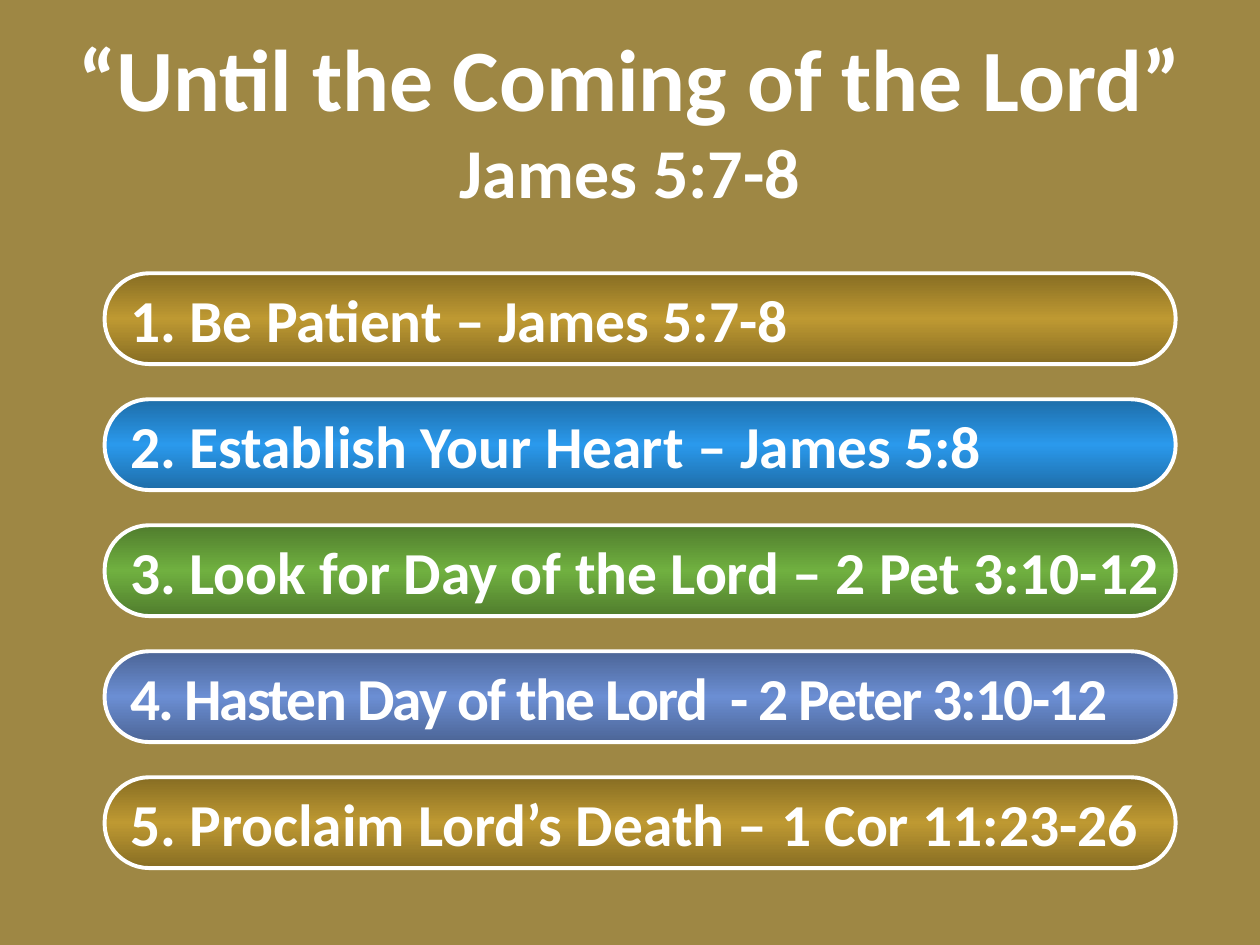
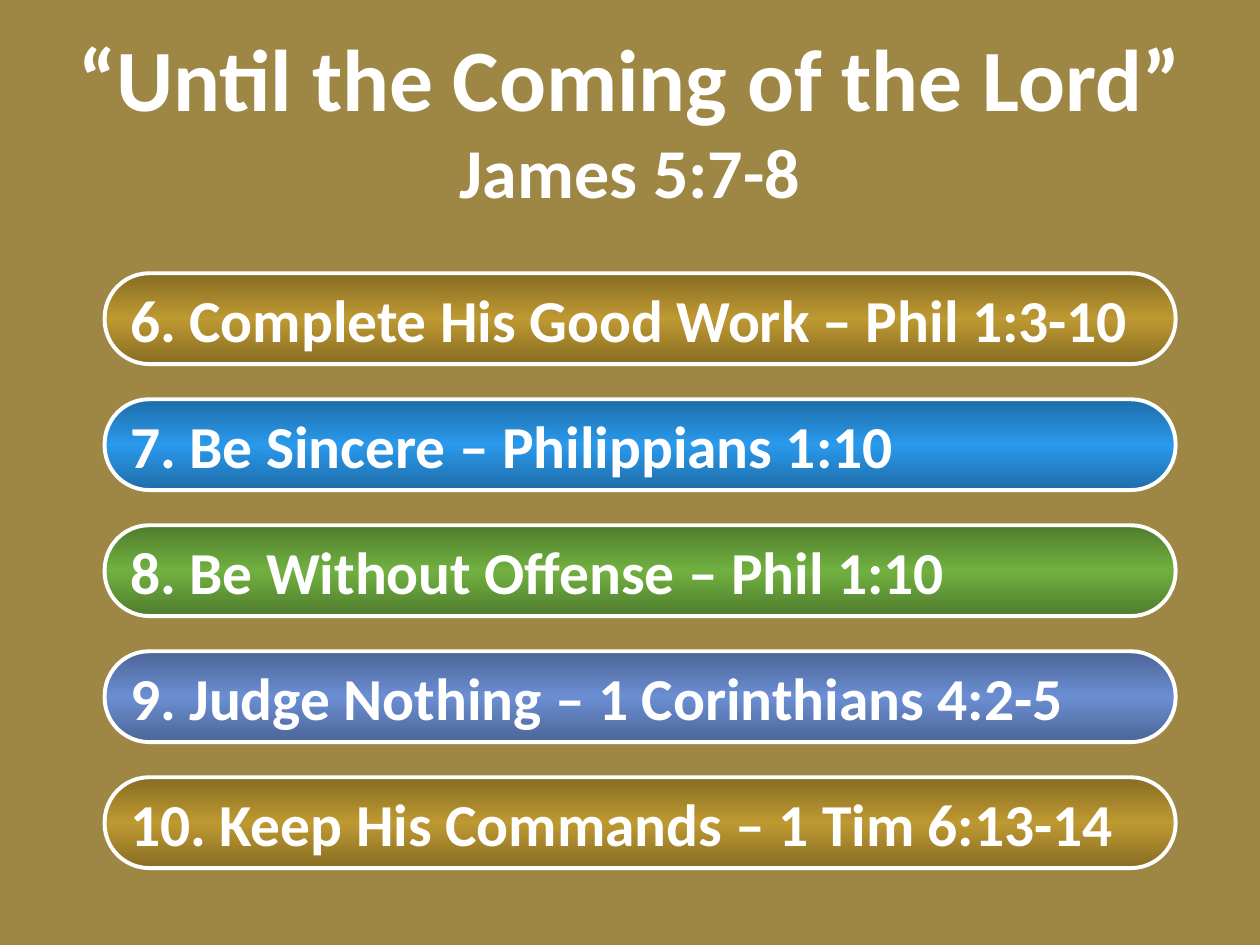
from copy import deepcopy
from dataclasses import dataclass
from itertools import cycle

from lxml import etree
from pptx import Presentation
from pptx import util as u
from pptx.dml.color import RGBColor
from pptx.enum import shapes, text
from pptx.oxml import ns


@dataclass(frozen=True)
class Theme:
    background: str = "9E8744"
    white: str = "FFFFFF"
    bars: tuple[str, ...] = ("BE9932", "2A99EC", "70B040", "6B8ED3")
    edge_shade: int = 46275  # thousandths of a percent
    font: str = "Calibri"
    title_size: int = 50
    subtitle_size: int = 40
    bar_size: int = 34
    outline: float = 2.25


@dataclass(frozen=True)
class Point:
    wording: str
    spacing: int = 0  # hundredths of a point


THEME = Theme()
TITLE_ONLY = 5
BAR_LEFT, BAR_TOP = u.Cm(2.11), u.Cm(5.51)
BAR_WIDTH, BAR_HEIGHT = u.Cm(21.59), u.Cm(1.83)
BAR_PITCH = u.Cm(2.54)

TITLE = "“Until the Coming of the Lord”"
SUBTITLE = "James 5:7-8"
SLIDES = (
    (
        Point("1. Be Patient – James 5:7-8"),
        Point("2. Establish Your Heart – James 5:8"),
        Point("3. Look for Day of the Lord – 2 Pet 3:10-12"),
        Point("4. Hasten Day of the Lord  - 2 Peter 3:10-12", spacing=-100),
        Point("5. Proclaim Lord’s Death – 1 Cor 11:23-26"),
    ),
    (
        Point("6. Complete His Good Work – Phil 1:3-10"),
        Point("7. Be Sincere – Philippians 1:10"),
        Point("8. Be Without Offense – Phil 1:10"),
        Point("9. Judge Nothing – 1 Corinthians 4:2-5"),
        Point("10. Keep His Commands – 1 Tim 6:13-14"),
    ),
)


def add_text(paragraph, wording: str, *, size: int, spacing: int = 0) -> None:
    run = paragraph.add_run()
    run.text = wording
    run.font.name = THEME.font
    run.font.size = u.Pt(size)
    run.font.bold = True
    run.font.color.rgb = RGBColor.from_string(THEME.white)
    if spacing:
        run.font._element.set("spc", str(spacing))


def add_title(slide) -> None:
    title = slide.shapes.title
    title.left, title.top = u.Cm(1.27), u.Cm(0.76)
    title.width, title.height = u.Cm(22.86), u.Cm(3.25)
    frame = title.text_frame
    frame.auto_size = text.MSO_AUTO_SIZE.NONE
    frame.vertical_anchor = text.MSO_ANCHOR.MIDDLE
    paragraph = frame.paragraphs[0]
    paragraph.alignment = text.PP_ALIGN.CENTER
    add_text(paragraph, TITLE, size=THEME.title_size)
    paragraph.add_line_break()
    add_text(paragraph, SUBTITLE, size=THEME.subtitle_size)


def fill_with_sheen(shape, colour: str) -> None:
    """Fill with a vertical gradient, full colour in the middle and shaded at both edges."""
    shape.fill.gradient()
    shape.fill.gradient_angle = 270
    stop_list = shape.element.find(".//" + ns.qn("a:gsLst"))
    stop_list.insert(1, deepcopy(stop_list[0]))
    for stop, element, position in zip(shape.fill.gradient_stops, stop_list, (0, 0.5, 1)):
        stop.position = position
        stop.color.rgb = RGBColor.from_string(colour)
        if position != 0.5:
            shade = etree.SubElement(element[0], ns.qn("a:shade"))
            shade.set("val", str(THEME.edge_shade))


def add_bar(slide, row: int, point: Point, colour: str) -> None:
    bar = slide.shapes.add_shape(
        shapes.MSO_SHAPE.ROUNDED_RECTANGLE,
        BAR_LEFT, BAR_TOP + row * BAR_PITCH, BAR_WIDTH, BAR_HEIGHT,
    )
    bar.adjustments[0] = 0.49
    bar.shadow.inherit = False
    fill_with_sheen(bar, colour)
    bar.line.color.rgb = RGBColor.from_string(THEME.white)
    bar.line.width = u.Pt(THEME.outline)
    frame = bar.text_frame
    frame.word_wrap = False
    frame.vertical_anchor = text.MSO_ANCHOR.MIDDLE
    paragraph = frame.paragraphs[0]
    paragraph.alignment = text.PP_ALIGN.LEFT
    add_text(paragraph, point.wording, size=THEME.bar_size, spacing=point.spacing)


def main() -> None:
    presentation = Presentation()
    presentation.slide_width, presentation.slide_height = u.Cm(25.4), u.Cm(19.05)
    background = presentation.slide_master.background.fill
    background.solid()
    background.fore_color.rgb = RGBColor.from_string(THEME.background)
    for points in SLIDES:
        slide = presentation.slides.add_slide(presentation.slide_layouts[TITLE_ONLY])
        add_title(slide)
        for row, (point, colour) in enumerate(zip(points, cycle(THEME.bars))):
            add_bar(slide, row, point, colour)
    presentation.save("out.pptx")


if __name__ == "__main__":
    main()
